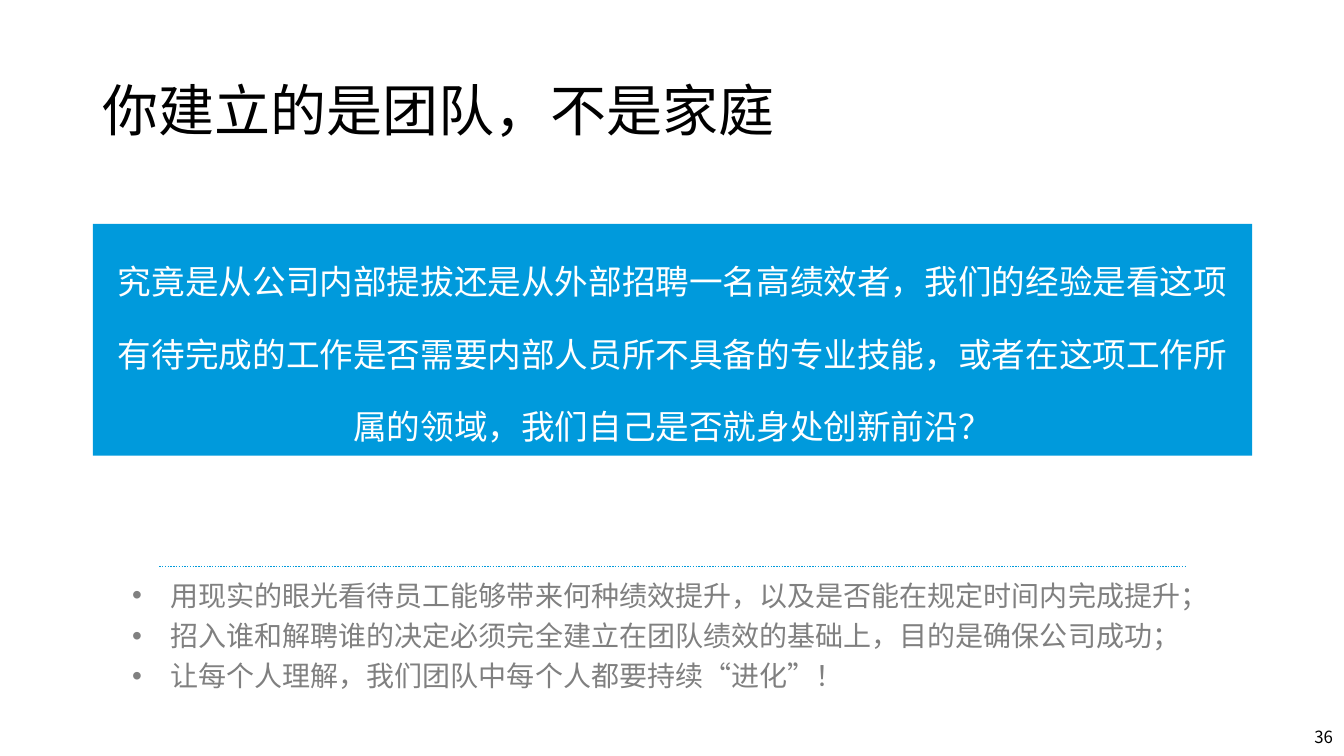
from lxml import etree
from pptx import Presentation, util as u
from pptx.dml.color import RGBColor
from pptx.enum import dml, shapes, text
from pptx.oxml.ns import qn

PX = 9144  # EMU per px, 100 px to the inch
COLORS = {"ink": "000000", "accent": "009ADC", "muted": "808080", "white": "FFFFFF"}
LATIN, CJK = "Arial", "Noto Sans CJK SC"
LEFT, CENTER, RIGHT = text.PP_ALIGN.LEFT, text.PP_ALIGN.CENTER, text.PP_ALIGN.RIGHT
TOP, MIDDLE = text.MSO_ANCHOR.TOP, text.MSO_ANCHOR.MIDDLE

TITLE = "你建立的是团队，不是家庭"
STATEMENT = ("究竟是从公司内部提拔还是从外部招聘一名高绩效者，我们的经验是看这项"
             "有待完成的工作是否需要内部人员所不具备的专业技能，或者在这项工作所"
             "属的领域，我们自己是否就身处创新前沿？")
PRINCIPLES = [
    "用现实的眼光看待员工能够带来何种绩效提升，以及是否能在规定时间内完成提升；",
    "招入谁和解聘谁的决定必须完全建立在团队绩效的基础上，目的是确保公司成功；",
    "让每个人理解，我们团队中每个人都要持续“进化”！",
]


def rgb(name):
    return RGBColor.from_string(COLORS[name])


def place(part, box):
    part.left, part.top, part.width, part.height = (n * PX for n in box)


def write(part, lines, size, color, align, spacing, anchor=TOP, indent=0, latin=LATIN):
    """Fill a part with paragraphs; an indent in px adds bullets."""
    frame = part.text_frame
    frame.word_wrap = True
    frame.auto_size = text.MSO_AUTO_SIZE.NONE
    frame.vertical_anchor = anchor
    for i, line in enumerate(lines):
        paragraph = frame.add_paragraph() if i else frame.paragraphs[0]
        props = paragraph._p.get_or_add_pPr()
        props.set("marL", str(indent * PX))
        props.set("indent", str(-indent * PX))
        if indent:
            etree.SubElement(props, qn("a:buFont")).set("typeface", LATIN)
            etree.SubElement(props, qn("a:buChar")).set("char", "•")
        else:
            etree.SubElement(props, qn("a:buNone"))
        paragraph.alignment = align
        paragraph.line_spacing = spacing
        paragraph.space_before = u.Pt(0)
        run = paragraph.add_run()
        run.text = line
        run.font.size = u.Pt(size)
        run.font.name = latin
        run.font.color.rgb = rgb(color)
        etree.SubElement(run.font._element, qn("a:ea")).set("typeface", CJK)


def add_title(slide, box):
    title = slide.shapes.title
    place(title, box)
    write(title, [TITLE], 40, "ink", LEFT, 0.9, MIDDLE)


def add_statement(slide, box):
    statement = slide.placeholders[1]
    place(statement, box)
    statement.fill.solid()
    statement.fill.fore_color.rgb = rgb("accent")
    write(statement, [STATEMENT], 24, "white", CENTER, 1.8)


def add_principles(slide, box):
    x, y, width, _ = box
    principles = slide.placeholders[2]
    place(principles, box)
    write(principles, PRINCIPLES, 20, "muted", LEFT, 1.2, indent=38)

    # Dotted rule along the top of the list
    rule = slide.shapes.add_connector(
        shapes.MSO_CONNECTOR.STRAIGHT,
        (x + 37) * PX, y * PX, (x + width - 48) * PX, y * PX)
    rule.line.color.rgb = rgb("accent")
    rule.line.width = u.Pt(1)
    rule.line.dash_style = dml.MSO_LINE.ROUND_DOT
    etree.SubElement(rule._element.spPr, qn("a:effectLst"))


def add_page_number(slide, box):
    number = slide.shapes.add_textbox(*(n * PX for n in box))
    write(number, ["36"], 12, "ink", RIGHT, 1.0, MIDDLE, latin=CJK)


def main():
    deck = Presentation()
    deck.slide_width, deck.slide_height = 1333 * PX, 750 * PX
    slide = deck.slides.add_slide(deck.slide_layouts.get_by_name("Two Content"))
    add_title(slide, (92, 40, 1193, 145))
    add_statement(slide, (92, 222, 1150, 230))
    add_principles(slide, (121, 562, 1102, 131))
    add_page_number(slide, (1032, 711, 300, 40))
    deck.save("out.pptx")


if __name__ == "__main__":
    main()
